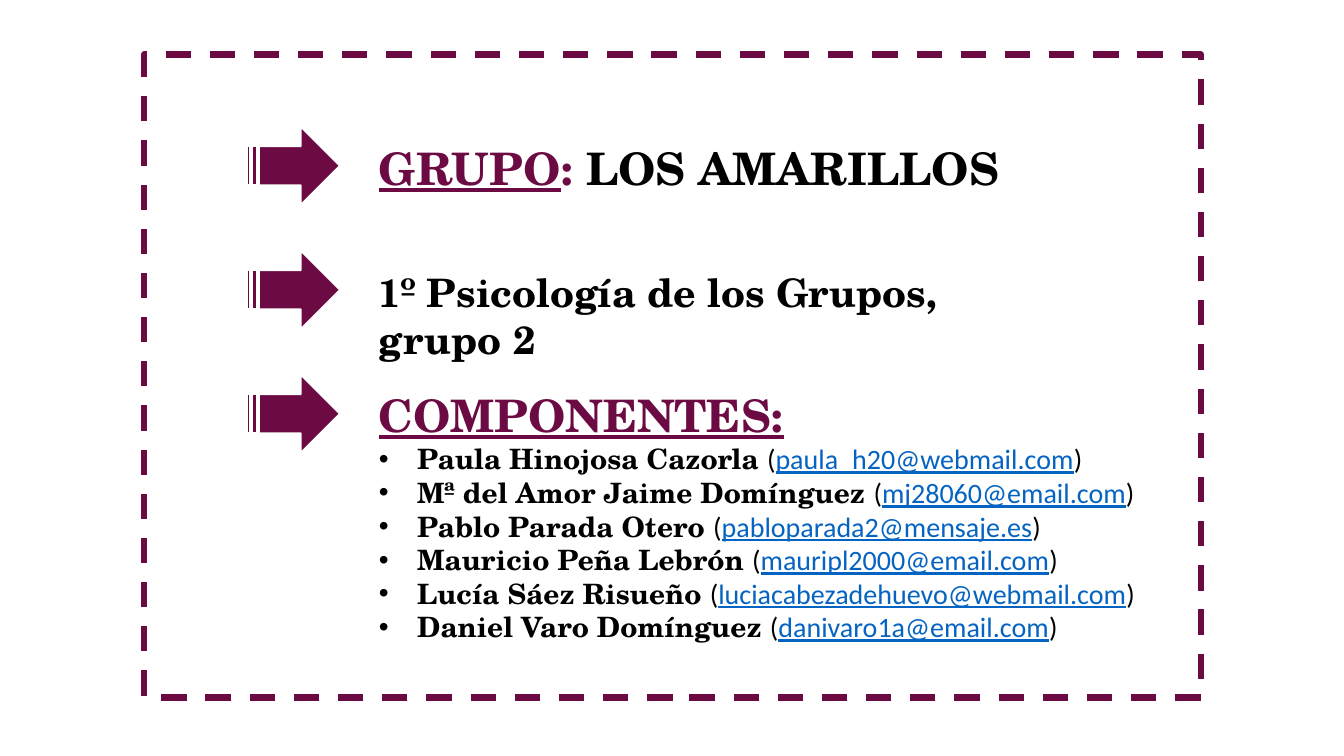
from dataclasses import dataclass
from lxml import etree
from pptx import Presentation
from pptx import util as u
from pptx.dml.color import RGBColor
from pptx.enum import dml, shapes, text
from pptx.oxml.ns import qn

PLUM = RGBColor(0x6C, 0x0A, 0x44)
BLACK = RGBColor(0, 0, 0)
WHITE = RGBColor(0xFF, 0xFF, 0xFF)
BLUE = RGBColor(0x05, 0x63, 0xC1)
SERIF = "TeX Gyre Schola"
SANS = "Calibri"
WIDE, HIGH = u.Inches(13.33), u.Inches(7.5)
TOP, STEP = 16.8, 16.4


@dataclass(frozen=True)
class Box:
    x: float
    y: float
    w: float
    h: float

    def emu(self) -> list[int]:
        sides = (self.x, WIDE), (self.y, HIGH), (self.w, WIDE), (self.h, HIGH)
        return [round(part * whole / 100) for part, whole in sides]


@dataclass(frozen=True)
class Run:
    words: str
    color: RGBColor = BLACK
    line: bool = False
    face: str = SERIF
    bold: bool = True


@dataclass(frozen=True)
class Entry:
    box: Box
    size: int
    runs: tuple[Run, ...]


@dataclass(frozen=True)
class Member:
    name: str
    mail: str


ENTRIES = (
    Entry(Box(27.45, 18, 51, 8.53), 32,
          (Run("GRUPO", PLUM, True), Run(": ", PLUM), Run("LOS AMARILLOS"))),
    Entry(Box(27.45, 34.8, 51, 7.6), 28,
          (Run("1º Psicología de los Grupos, grupo 2"),)),
    Entry(Box(27.45, 50.67, 61.89, 42.67), 32,
          (Run("COMPONENTES:", PLUM, True),)),
)
TEAM = (
    Member("Paula Hinojosa Cazorla", "paula_h20@webmail.com"),
    Member("Mª del Amor Jaime Domínguez", "mj28060@email.com"),
    Member("Pablo Parada Otero", "pabloparada2@mensaje.es"),
    Member("Mauricio Peña Lebrón", "mauripl2000@email.com"),
    Member("Lucía Sáez Risueño", "luciacabezadehuevo@webmail.com"),
    Member("Daniel Varo Domínguez", "danivaro1a@email.com"),
)


def draw(slide, kind: shapes.MSO_SHAPE, box: Box, fill: RGBColor,
         edge: RGBColor, width: float):
    shape = slide.shapes.add_shape(kind, *box.emu())
    shape.shadow.inherit = False
    shape.fill.solid()
    shape.fill.fore_color.rgb = fill
    shape.line.color.rgb = edge
    shape.line.width = u.Pt(width)
    return shape


def frame(slide) -> None:
    shape = draw(slide, shapes.MSO_SHAPE.RECTANGLE,
                 Box(10.73, 7.2, 78.62, 85.07), WHITE, PLUM, 4.5)
    shape.line.dash_style = dml.MSO_LINE.DASH
    tint = shape.fill._xPr.find(".//" + qn("a:srgbClr"))
    etree.SubElement(tint, qn("a:alpha"), val="80000")


def write(para, size: int, runs: tuple[Run, ...]) -> None:
    para.font.size = u.Pt(size)
    first = runs[0]
    for key, pick in (("name", "face"), ("bold", "bold"), ("underline", "line")):
        if len({getattr(run, pick) for run in runs}) == 1:
            setattr(para.font, key, getattr(first, pick))
    if len({run.color for run in runs}) == 1:
        para.font.color.rgb = first.color
    for run in runs:
        item = para.add_run()
        item.text = run.words
        font = item.font
        font.size = u.Pt(size)
        font.name, font.bold, font.underline = run.face, run.bold, run.line
        font.color.rgb = run.color


def label(slide, entry: Entry):
    area = slide.shapes.add_textbox(*entry.box.emu()).text_frame
    area.word_wrap = True
    area.auto_size = text.MSO_AUTO_SIZE.SHAPE_TO_FIT_TEXT
    write(area.paragraphs[0], entry.size, entry.runs)
    return area


def bullet(para) -> None:
    props = para._p.get_or_add_pPr()
    props.set("marL", str(u.Inches(0.38)))
    props.set("indent", str(u.Inches(-0.38)))
    etree.SubElement(props, qn("a:buFont"), typeface="Arial")
    etree.SubElement(props, qn("a:buChar"), char="•")


def roster(area, team: tuple[Member, ...]) -> None:
    for one in team:
        para = area.add_paragraph()
        bullet(para)
        write(para, 20, (
            Run(one.name + " "),
            Run("(", face=SANS, bold=False),
            Run(one.mail, BLUE, True, SANS, False),
            Run(")", face=SANS, bold=False),
        ))


def main() -> None:
    deck = Presentation()
    deck.slide_width, deck.slide_height = WIDE, HIGH
    slide = deck.slides.add_slide(deck.slide_layouts[6])
    frame(slide)
    for row, entry in enumerate(ENTRIES):
        draw(slide, shapes.MSO_SHAPE.STRIPED_RIGHT_ARROW,
             Box(18.38, TOP + row * STEP, 6.9, 10.27), PLUM, WHITE, 1)
        area = label(slide, entry)
    roster(area, TEAM)
    deck.save("out.pptx")


if __name__ == "__main__":
    main()
